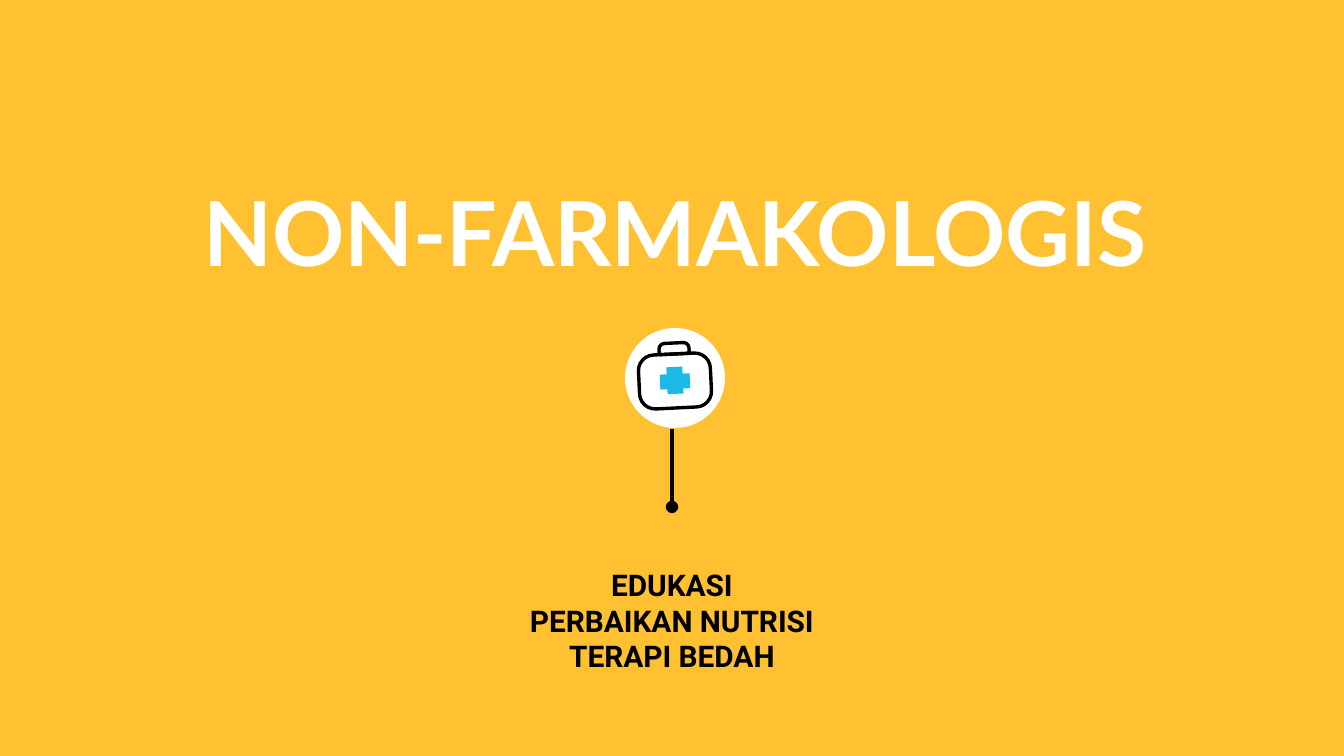
"""Builds the NON-FARMAKOLOGIS section slide with its first-aid kit icon."""
import copy

import pptx
import pptx.util
import pptx.dml.color
import pptx.enum.shapes
import pptx.enum.text
import pptx.oxml
import pptx.oxml.ns

PX = 914400 / 134.4
COLORS = {"background": "FFC132", "ink": "000000", "paper": "FFFFFF", "cross": "1BB9E6"}
TILT = -2.7
KIND = pptx.enum.shapes.MSO_SHAPE
ANCHOR = pptx.enum.text.MSO_ANCHOR


def color(name):
    return pptx.dml.color.RGBColor.from_string(COLORS[name])


def add_text(text, box, font, size, fill, anchor=ANCHOR.TOP):
    frame = slide.shapes.add_textbox(*[round(value * PX) for value in box]).text_frame
    frame.word_wrap = True
    frame.vertical_anchor = anchor
    frame.margin_left = frame.margin_right = pptx.util.Inches(0.1)
    frame.margin_top = frame.margin_bottom = pptx.util.Inches(0.1)
    paragraph = frame.paragraphs[0]
    paragraph.text = text
    paragraph.alignment = pptx.enum.text.PP_ALIGN.CENTER
    for run in paragraph.runs:
        run.font.name = font
        run.font.size = pptx.util.Pt(size)
        run.font.bold = True
        run.font.color.rgb = color(fill)
    for line_break in paragraph._p.findall(pptx.oxml.ns.qn("a:br")):
        line_break.append(copy.deepcopy(paragraph.runs[0]._r.rPr))


presentation = pptx.Presentation()
presentation.slide_width = round(1344 * PX)
presentation.slide_height = round(756 * PX)
slide = presentation.slides.add_slide(presentation.slide_layouts[6])
slide.background.fill.solid()
slide.background.fill.fore_color.rgb = color("background")

stem = slide.shapes.add_connector(
    pptx.enum.shapes.MSO_CONNECTOR.STRAIGHT,
    *[round(value * PX) for value in (672, 429, 672, 507)],
)
stem.line.color.rgb = color("ink")
stem.line.width = pptx.util.Pt(2.25)
namespace = pptx.oxml.ns.nsdecls("a")
properties = stem._element.spPr
properties.find(pptx.oxml.ns.qn("a:ln")).append(
    pptx.oxml.parse_xml(f'<a:tailEnd {namespace} type="oval"/>')
)
properties.append(pptx.oxml.parse_xml(f"<a:effectLst {namespace}/>"))

add_text("NON-FARMAKOLOGIS", (108, 134, 1134, 194), "Lato", 48, "paper", ANCHOR.MIDDLE)
add_text("EDUKASI\nPERBAIKAN NUTRISI\nTERAPI BEDAH", (430, 553, 484, 140), "Roboto", 16, "ink")

icon_parts = [
    (KIND.OVAL, (625, 328, 100, 100), 0, "paper", None),
    (KIND.ROUNDED_RECTANGLE, (639, 354, 72, 54), TILT, None, 0.29),
    (KIND.RECTANGLE, (667, 367, 16, 27), TILT, "cross", None),
    (KIND.RECTANGLE, (660, 374, 30, 15), TILT, "cross", None),
    (KIND.ROUND_2_SAME_RECTANGLE, (659, 343, 30, 11), TILT, None, 0.5),
]
for kind, box, rotation, fill, radius in icon_parts:
    shape = slide.shapes.add_shape(kind, *[round(value * PX) for value in box])
    shape.rotation = rotation
    shape.shadow.inherit = False
    if radius:
        shape.adjustments[0] = radius
    if fill:
        shape.fill.solid()
        shape.fill.fore_color.rgb = color(fill)
        shape.line.fill.background()
    else:
        shape.fill.background()
        shape.line.color.rgb = color("ink")
        shape.line.width = pptx.util.Pt(1.8)

presentation.save("out.pptx")
